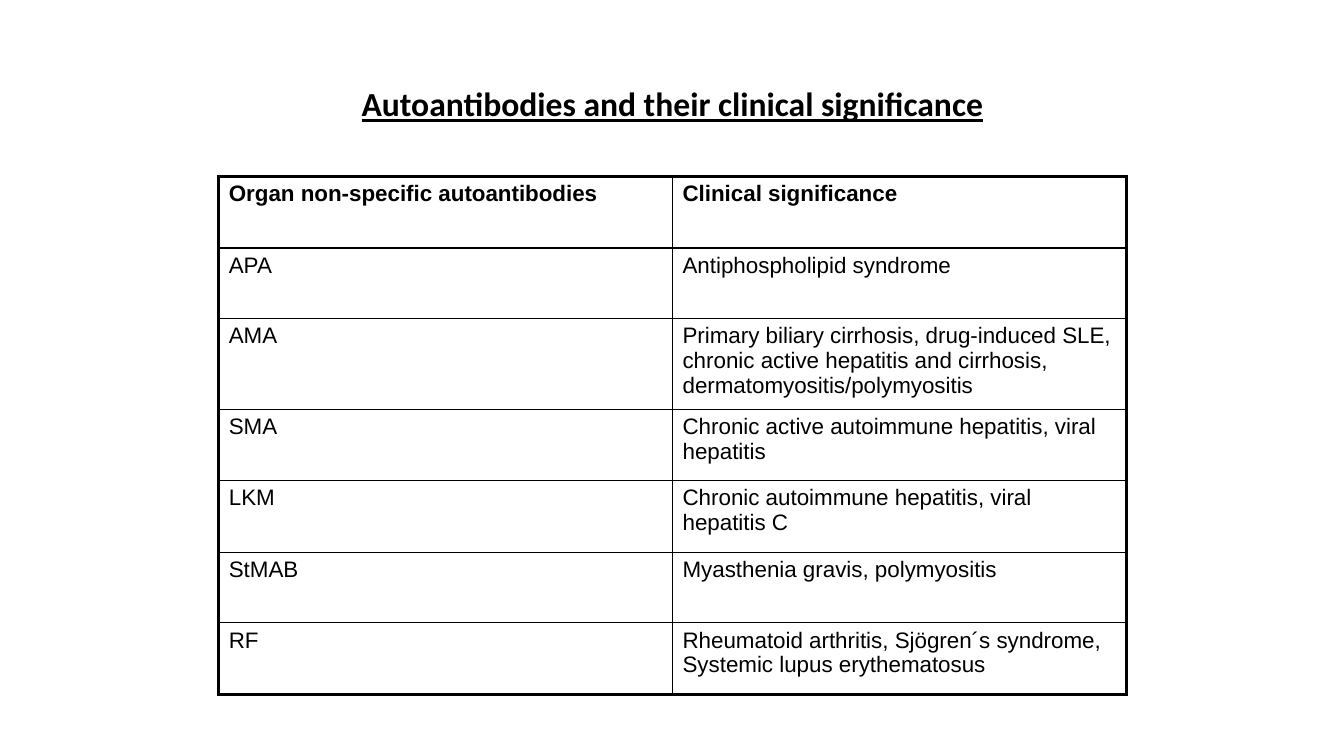
import dataclasses

import lxml.etree
import pptx
import pptx.dml.color
import pptx.enum.text
import pptx.oxml.ns
import pptx.util

EMU_PER_PX = 9144


def px(length):
    return pptx.util.Emu(length * EMU_PER_PX)


@dataclasses.dataclass(frozen=True)
class Theme:
    ink: str = "000000"
    title_font: str = "Calibri"
    table_font: str = "Arial"
    title_size: int = 24
    table_size: int = 16
    outer_line: float = 2.25
    inner_line: float = 1


def write_text(frame, text, *, font, size, color, bold=False, underline=False,
               align=pptx.enum.text.PP_ALIGN.LEFT, line_spacing=1.0):
    frame.word_wrap = True
    para = frame.paragraphs[0]
    para.alignment = align
    para.line_spacing = line_spacing
    span = para.add_run()
    span.text = text
    span.font.name = font
    span.font.size = pptx.util.Pt(size)
    span.font.bold = bold
    span.font.underline = underline
    span.font.color.rgb = pptx.dml.color.RGBColor.from_string(color)


class SlideBuilder:
    def __init__(self, deck, theme):
        self.theme = theme
        self.page = deck.slides.add_slide(deck.slide_layouts.get_by_name("Title Only"))

    def title(self, text, left, top, width, height):
        box = self.page.shapes.title
        box.left, box.top, box.width, box.height = map(px, (left, top, width, height))
        box.text_frame.vertical_anchor = pptx.enum.text.MSO_ANCHOR.MIDDLE
        write_text(box.text_frame, text, font=self.theme.title_font,
                   size=self.theme.title_size, color=self.theme.ink, bold=True,
                   underline=True, align=pptx.enum.text.PP_ALIGN.CENTER,
                   line_spacing=1.5)

    def borders(self, cell, outer_sides):
        properties = cell._tc.get_or_add_tcPr()
        for position, side in enumerate("LRTB"):
            points = self.theme.outer_line if side in outer_sides else self.theme.inner_line
            line = lxml.etree.Element(pptx.oxml.ns.qn(f"a:ln{side}"),
                                      w=str(pptx.util.Pt(points)))
            fill = lxml.etree.SubElement(line, pptx.oxml.ns.qn("a:solidFill"))
            lxml.etree.SubElement(fill, pptx.oxml.ns.qn("a:srgbClr"), val=self.theme.ink)
            properties.insert(position, line)

    def table(self, rows, left, top, column_widths, row_heights):
        grid = self.page.shapes.add_table(
            len(rows), len(column_widths), px(left), px(top),
            px(sum(column_widths)), px(sum(row_heights))).table
        grid.horz_banding = False
        grid.first_row = False
        for column, width in zip(grid.columns, column_widths):
            column.width = px(width)
        for row, height in zip(grid.rows, row_heights):
            row.height = px(height)
        last_row, last_column = len(rows) - 1, len(column_widths) - 1
        for row_index, texts in enumerate(rows):
            for column_index, text in enumerate(texts):
                cell = grid.cell(row_index, column_index)
                cell.fill.background()
                outer = {"T": row_index == 0, "B": row_index == last_row,
                         "L": column_index == 0, "R": column_index == last_column}
                self.borders(cell, [side for side, is_outer in outer.items() if is_outer])
                write_text(cell.text_frame, text, font=self.theme.table_font,
                           size=self.theme.table_size, color=self.theme.ink,
                           bold=row_index == 0)


AUTOANTIBODIES = [
    ("Organ non-specific autoantibodies", "Clinical significance"),
    ("APA", "Antiphospholipid syndrome"),
    ("AMA", "Primary biliary cirrhosis, drug-induced SLE, chronic active hepatitis "
            "and cirrhosis, dermatomyositis/polymyositis"),
    ("SMA", "Chronic active autoimmune hepatitis, viral hepatitis"),
    ("LKM", "Chronic autoimmune hepatitis, viral hepatitis C"),
    ("StMAB", "Myasthenia gravis, polymyositis"),
    ("RF", "Rheumatoid arthritis, Sjögren´s syndrome, Systemic lupus erythematosus"),
]


def main():
    deck = pptx.Presentation()
    deck.slide_width, deck.slide_height = px(1333), px(750)
    builder = SlideBuilder(deck, Theme())
    builder.title("Autoantibodies and their clinical significance", 67, 30, 1200, 125)
    builder.table(AUTOANTIBODIES, 217, 175, [450, 450], [71, 70, 90, 71, 71, 70, 71])
    deck.save("out.pptx")


if __name__ == "__main__":
    main()
